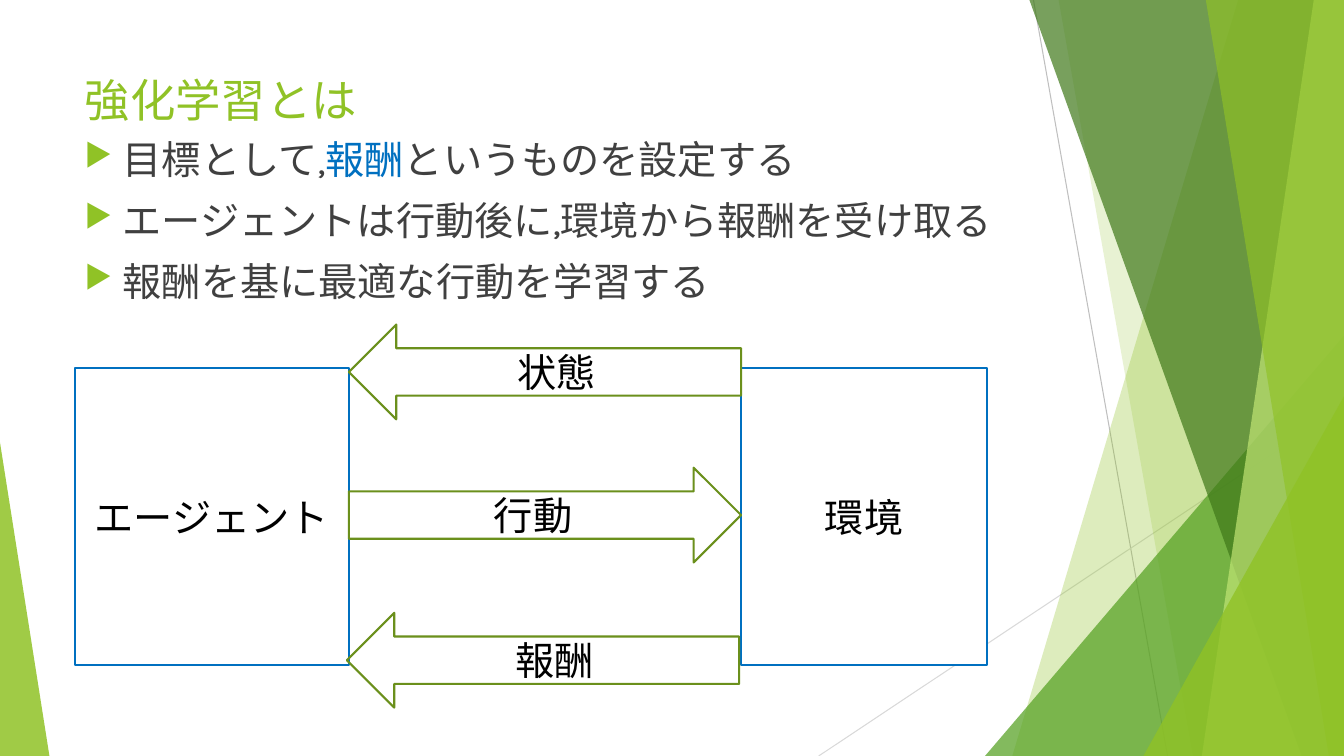
from lxml import etree
from pptx import Presentation
from pptx.dml.color import RGBColor
from pptx.enum.shapes import MSO_CONNECTOR, MSO_SHAPE as SHAPE
from pptx.enum.text import MSO_ANCHOR as ANCHOR, PP_ALIGN as ALIGN
from pptx.oxml.ns import qn
from pptx.util import Inches, Pt

FONT = "Karla"
GREEN, DARK_GREEN, BLUE = "90C226", "6B901C", "0070C0"
WHITE, BLACK, GRAY = "FFFFFF", "000000", "404040"
W, H = 13.33, 7.5


def rgb(value):
    return RGBColor.from_string(value)


def add_run(p, text, size, color):
    r = p.add_run()
    r.text = text
    r.font.size = Pt(size)
    r.font.color.rgb = rgb(color)
    r.font.name = FONT
    latin = r.font._element.find(qn("a:latin"))
    east_asian = etree.Element(qn("a:ea"), typeface=FONT)
    latin.addnext(east_asian)


def fill_translucent(sp, color, percent):
    sp.shadow.inherit = False
    sp.fill.solid()
    sp.fill.fore_color.rgb = rgb(color)
    sp.line.fill.background()
    solid = sp._element.spPr.find(qn("a:solidFill"))
    etree.SubElement(solid[0], qn("a:alpha"), val=str(percent * 1000))


def add_thin_line(s, start, end, color):
    line = s.shapes.add_connector(MSO_CONNECTOR.STRAIGHT,
                                  *map(Inches, start + end))
    line.line.color.rgb = rgb(color)
    line.line.width = Pt(0.75)
    etree.SubElement(line._element.spPr, qn("a:effectLst"))


def add_band(s, top_x, bottom_x, color, percent):
    """Fill from a slanted left edge to the right side of the slide."""
    corners = [(top_x, 0), (W, 0), (W, H), (bottom_x, H)]
    points = [(Inches(x), Inches(y)) for x, y in corners]
    builder = s.shapes.build_freeform(*points[0])
    builder.add_line_segments(points[1:], close=True)
    fill_translucent(builder.convert_to_shape(), color, percent)


def add_triangle(s, left, top, width, apex, color, percent):
    """Stand a triangle on the bottom edge; apex is 0 (left) to 1 (right)."""
    sp = s.shapes.add_shape(SHAPE.ISOSCELES_TRIANGLE, Inches(left), Inches(top),
                            Inches(width), Inches(H - top))
    sp.adjustments[0] = apex
    fill_translucent(sp, color, percent)


def add_decoration(s):
    add_thin_line(s, (10.25, 0), (11.58, H), "BFBFBF")
    add_thin_line(s, (W, 4.03), (8.12, H), "D9D9D9")
    add_band(s, 12.28, 10.04, GREEN, 30)
    add_band(s, 10.5, 11.83, GREEN, 20)
    add_triangle(s, 9.77, 3.33, 3.56, 1, "54A021", 72)
    add_band(s, 10.21, 12.91, "3F7819", 70)
    add_band(s, 13.03, 11.92, "C0E474", 70)
    add_band(s, 11.96, 13.18, GREEN, 65)
    add_triangle(s, 11.34, 3.93, 1.99, 1, GREEN, 80)
    add_triangle(s, 0, 4.39, 0.49, 0, GREEN, 85)


def add_title(s, text, left, top, width, height):
    title = s.shapes.title
    title.left, title.top = Inches(left), Inches(top)
    title.width, title.height = Inches(width), Inches(height)
    tf = title.text_frame
    tf.vertical_anchor = ANCHOR.MIDDLE
    p = tf.paragraphs[0]
    p.alignment = ALIGN.LEFT
    add_run(p, text, 32.4, GREEN)


def set_bullet(p):
    pPr = p._p.get_or_add_pPr()
    pPr.set("marL", str(Inches(0.38)))
    pPr.set("indent", str(-Inches(0.38)))
    color = etree.SubElement(pPr, qn("a:buClr"))
    etree.SubElement(color, qn("a:srgbClr"), val=GREEN)
    etree.SubElement(pPr, qn("a:buSzPct"), val="80000")
    etree.SubElement(pPr, qn("a:buChar"), char="▶")


def add_bullets(s, items, left, top, width, height):
    box = s.shapes.add_textbox(*map(Inches, (left, top, width, height)))
    tf = box.text_frame
    tf.word_wrap = True
    for i, runs in enumerate(items):
        p = tf.add_paragraph() if i else tf.paragraphs[0]
        p.space_before = Pt(10 if i else 0)
        set_bullet(p)
        for text, color in runs:
            add_run(p, text, 28, color)


def add_labelled(s, kind, text, box, line, fill=None):
    sp = s.shapes.add_shape(kind, *map(Inches, box))
    sp.shadow.inherit = False
    if fill:
        sp.fill.solid()
        sp.fill.fore_color.rgb = rgb(fill)
    else:
        sp.fill.background()
    sp.line.color.rgb = rgb(line)
    sp.line.width = Pt(1.5)
    tf = sp.text_frame
    tf.word_wrap = True
    tf.vertical_anchor = ANCHOR.MIDDLE
    p = tf.paragraphs[0]
    p.alignment = ALIGN.CENTER
    add_run(p, text, 28, BLACK)


def add_learning_loop(s, left, top, width, height):
    """Place agent and environment at the ends, with arrows between them."""
    agent_w, env_w, arrow_h = 2.72, 2.44, 0.94
    gap = width - agent_w - env_w
    arrow_x = left + agent_w
    add_labelled(s, SHAPE.RECTANGLE, "エージェント",
                 (left, top, agent_w, height), BLUE, WHITE)
    add_labelled(s, SHAPE.RECTANGLE, "環境",
                 (arrow_x + gap, top, env_w, height), BLUE, WHITE)
    arrows = [(SHAPE.RIGHT_ARROW, "行動", 0, 0.99),
              (SHAPE.LEFT_ARROW, "状態", 0, -0.43),
              (SHAPE.LEFT_ARROW, "報酬", -0.02, 2.43)]
    for kind, text, dx, dy in arrows:
        add_labelled(s, kind, text, (arrow_x + dx, top + dy, gap, arrow_h),
                     DARK_GREEN)


def main():
    prs = Presentation()
    prs.slide_width, prs.slide_height = Inches(W), Inches(H)
    s = prs.slides.add_slide(prs.slide_layouts[5])
    add_decoration(s)
    add_title(s, "強化学習とは", 0.74, 0.67, 9.4, 0.63)
    add_bullets(s, [
        [("目標として,", GRAY), ("報酬", BLUE), ("というものを設定する", GRAY)],
        [("エージェントは行動後に,環境から報酬を受け取る", GRAY)],
        [("報酬を基に最適な行動を学習する", GRAY)],
    ], 0.74, 1.29, 9.4, 5.31)
    add_learning_loop(s, 0.74, 3.65, 9.05, 2.95)
    prs.save("out.pptx")


if __name__ == "__main__":
    main()
